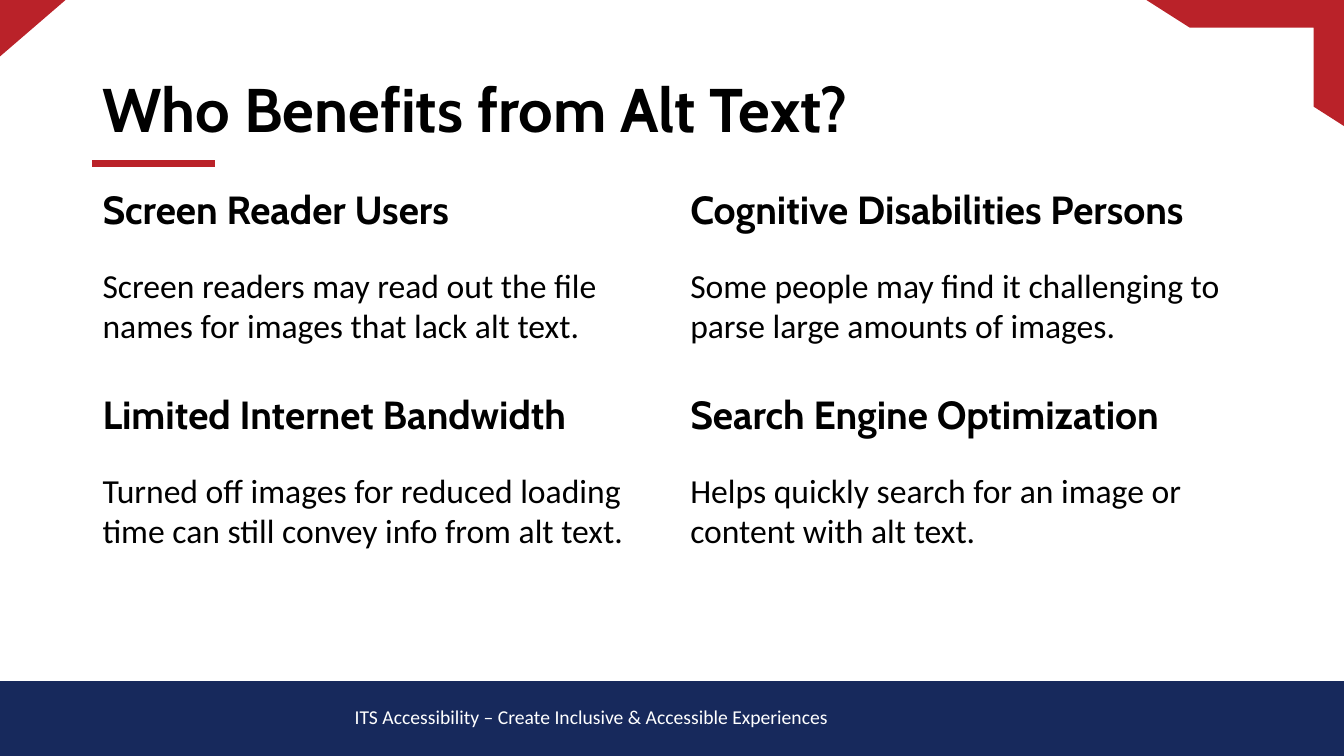
import pptx
import pptx.util
import pptx.dml.color
import pptx.enum.shapes
import pptx.enum.text
import lxml.etree
from dataclasses import dataclass

Pt = pptx.util.Pt
Color = pptx.dml.color.RGBColor.from_string
Kind = pptx.enum.shapes.MSO_SHAPE
Anchor = pptx.enum.text.MSO_ANCHOR


@dataclass(frozen=True)
class Theme:
    red: str = "BA2229"
    navy: str = "17295C"
    black: str = "000000"
    white: str = "FFFFFF"
    head: str = "Cabin"
    body: str = "Calibri"
    title: int = 44
    topic: int = 28
    text: int = 24
    foot: int = 14


theme = Theme()
deck = pptx.Presentation()
deck.slide_width = Pt(960)
deck.slide_height = Pt(540)
slide = deck.slides.add_slide(deck.slide_layouts[6])


def add_block(kind, left, top, width, height, color):
    block = slide.shapes.add_shape(kind, Pt(left), Pt(top), Pt(width), Pt(height))
    block.shadow.inherit = False
    block.fill.solid()
    block.fill.fore_color.rgb = Color(color)
    block.line.fill.background()
    return block


def add_text(words, left, top, width, height, face, size, color=theme.black,
             bold=False, anchor=Anchor.TOP, lead=0.9):
    box = slide.shapes.add_textbox(Pt(left), Pt(top), Pt(width), Pt(height))
    frame = box.text_frame
    frame.word_wrap = True
    frame.vertical_anchor = anchor
    para = frame.paragraphs[0]
    para.line_spacing = lead
    run = para.add_run()
    run.text = words
    run.font.name = face
    run.font.size = Pt(size)
    run.font.bold = bold
    run.font.color.rgb = Color(color)


add_block(Kind.RECTANGLE, 0, 486.6, 960, 53.4, theme.navy)

rule = slide.shapes.add_connector(
    pptx.enum.shapes.MSO_CONNECTOR.STRAIGHT, Pt(66), Pt(116.6), Pt(153.5), Pt(116.6))
rule.line.color.rgb = Color(theme.red)
rule.line.width = Pt(5)
lxml.etree.SubElement(rule.element.spPr, pptx.oxml.ns.qn("a:effectLst"))

add_text("Who Benefits from Alt Text?", 66.2, 53.3, 828, 62.6,
         theme.head, theme.title, bold=True)

topics = [
    ("Screen Reader Users",
     "Screen readers may read out the file names for images that lack alt text."),
    ("Cognitive Disabilities Persons",
     "Some people may find it challenging to parse large amounts of images."),
    ("Limited Internet Bandwidth",
     "Turned off images for reduced loading time can still convey info from alt text."),
    ("Search Engine Optimization",
     "Helps quickly search for an image or content with alt text."),
]
for index, (topic, detail) in enumerate(topics):
    row, col = divmod(index, 2)
    left = 66.2 + col * 419.8
    top = 132.5 + row * 146.2
    add_text(topic, left, top, 407, 37.4, theme.head, theme.topic,
             bold=True, anchor=Anchor.BOTTOM)
    add_text(detail, left, top + 53.3, 407, 67.7, theme.body, theme.text, lead=1)

frame = add_block(Kind.HALF_FRAME, 818.9, 0, 141.1, 90, theme.red)
frame.adjustments[0] = 0.22
frame.adjustments[1] = 0.24
frame.element.spPr.xfrm.set("flipH", "1")

corner = add_block(Kind.ISOSCELES_TRIANGLE, 0, 0, 46.8, 40.3, theme.red)
corner.adjustments[0] = 1
corner.rotation = 180

add_text("ITS Accessibility – Create Inclusive & Accessible Experiences",
         246.2, 499.7, 647, 26.6, theme.body, theme.foot,
         color=theme.white, anchor=Anchor.MIDDLE)

deck.save("out.pptx")
